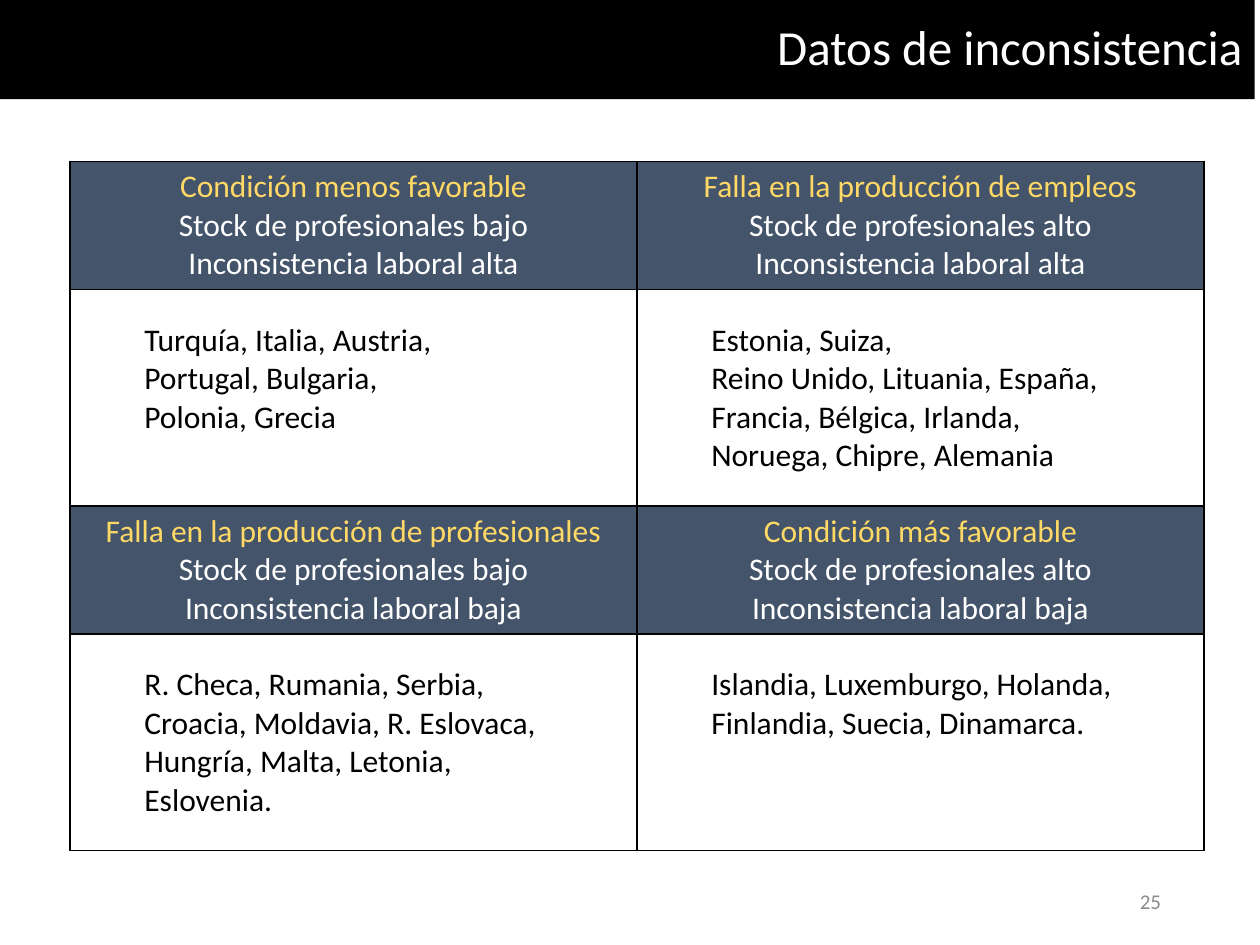
from dataclasses import dataclass, field

from lxml.etree import SubElement
from pptx import Presentation
from pptx.dml.color import RGBColor
from pptx.enum.shapes import MSO_SHAPE
from pptx.enum.text import MSO_ANCHOR, PP_ALIGN
from pptx.oxml.ns import qn
from pptx.slide import Slide
from pptx.util import Pt

COLORS = {
    "black": "000000",
    "white": "FFFFFF",
    "header": "44546A",
    "condition": "FFD966",
    "number": "8C8C8C",
}

QUADRANTS = [
    [
        ("Condición menos favorable", "bajo", "alta",
         ["Turquía, Italia, Austria,", "Portugal, Bulgaria,", "Polonia, Grecia"]),
        ("Falla en la producción de empleos", "alto", "alta",
         ["Estonia, Suiza,", "Reino Unido, Lituania, España,",
          "Francia, Bélgica, Irlanda,", "Noruega, Chipre, Alemania"]),
    ],
    [
        ("Falla en la producción de profesionales", "bajo", "baja",
         ["R. Checa, Rumania, Serbia,", "Croacia, Moldavia, R. Eslovaca,",
          "Hungría, Malta, Letonia,", "Eslovenia."]),
        ("Condición más favorable", "alto", "baja",
         ["Islandia, Luxemburgo, Holanda,", "Finlandia, Suecia, Dinamarca."]),
    ],
]


@dataclass
class SlideBuilder:
    """Holds the style and the current slide, and adds each kind of element."""

    slide: Slide
    font: str = "Calibri"
    colors: dict = field(default_factory=lambda: COLORS)

    def color(self, name):
        return RGBColor.from_string(self.colors[name])

    def fill_text(self, frame, lines, size, align):
        frame.word_wrap = True
        for index, (text, color) in enumerate(lines):
            paragraph = frame.add_paragraph() if index else frame.paragraphs[0]
            paragraph.text = text
            paragraph.alignment = align
            paragraph.font.name = self.font
            paragraph.font.size = Pt(size)
            paragraph.font.color.rgb = self.color(color)

    def title_bar(self, text, left, top, width, height):
        shape = self.slide.shapes.add_shape(
            MSO_SHAPE.RECTANGLE, Pt(left), Pt(top), Pt(width), Pt(height))
        shape.shadow.inherit = False
        shape.fill.solid()
        shape.fill.fore_color.rgb = self.color("black")
        shape.line.fill.background()
        shape.text_frame.vertical_anchor = MSO_ANCHOR.MIDDLE
        self.fill_text(shape.text_frame, [(text, "white")], 28, PP_ALIGN.RIGHT)
        shape.text_frame.paragraphs[0].line_spacing = 0.9

    def page_number(self, text, left, top, width, height):
        shape = self.slide.shapes.add_textbox(Pt(left), Pt(top), Pt(width), Pt(height))
        shape.text_frame.vertical_anchor = MSO_ANCHOR.MIDDLE
        self.fill_text(shape.text_frame, [(text, "number")], 12, PP_ALIGN.RIGHT)

    def borders(self, cell):
        properties = cell._tc.get_or_add_tcPr()
        for side in ("a:lnL", "a:lnR", "a:lnT", "a:lnB"):
            line = SubElement(properties, qn(side), w=str(Pt(1)))
            fill = SubElement(line, qn("a:solidFill"))
            SubElement(fill, qn("a:srgbClr"), val=self.colors["black"])

    def header_cell(self, cell, condition, stock, inconsistency):
        self.borders(cell)
        cell.fill.solid()
        cell.fill.fore_color.rgb = self.color("header")
        lines = [
            (condition, "condition"),
            (f"Stock de profesionales {stock}", "white"),
            (f"Inconsistencia laboral {inconsistency}", "white"),
        ]
        self.fill_text(cell.text_frame, lines, 18, PP_ALIGN.CENTER)

    def country_cell(self, cell, countries):
        self.borders(cell)
        cell.fill.background()
        cell.margin_left = Pt(42.5)
        cell.margin_top = Pt(18.25)
        lines = [(line, "black") for line in countries]
        self.fill_text(cell.text_frame, lines, 18, PP_ALIGN.LEFT)

    def quadrant_table(self, quadrants, left, top, width, header_height, body_height):
        heights = [header_height, body_height] * len(quadrants)
        columns = len(quadrants[0])
        table = self.slide.shapes.add_table(
            len(heights), columns, Pt(left), Pt(top), Pt(width), Pt(sum(heights))).table
        for row, height in zip(table.rows, heights):
            row.height = Pt(height)
        for column in table.columns:
            column.width = Pt(width / columns)
        for band, quadrant_row in enumerate(quadrants):
            for column, (*heading, countries) in enumerate(quadrant_row):
                self.header_cell(table.cell(2 * band, column), *heading)
                self.country_cell(table.cell(2 * band + 1, column), countries)


def main():
    presentation = Presentation()
    presentation.slide_width, presentation.slide_height = Pt(720), Pt(540)
    builder = SlideBuilder(presentation.slides.add_slide(presentation.slide_layouts[6]))
    builder.title_bar("Datos de inconsistencia", 0, 0, 717, 56.75)
    builder.quadrant_table(QUADRANTS, 40, 92.25, 648, 72, 123.75)
    builder.page_number("25", 508.5, 500.5, 162, 28.75)
    presentation.save("out.pptx")


if __name__ == "__main__":
    main()
